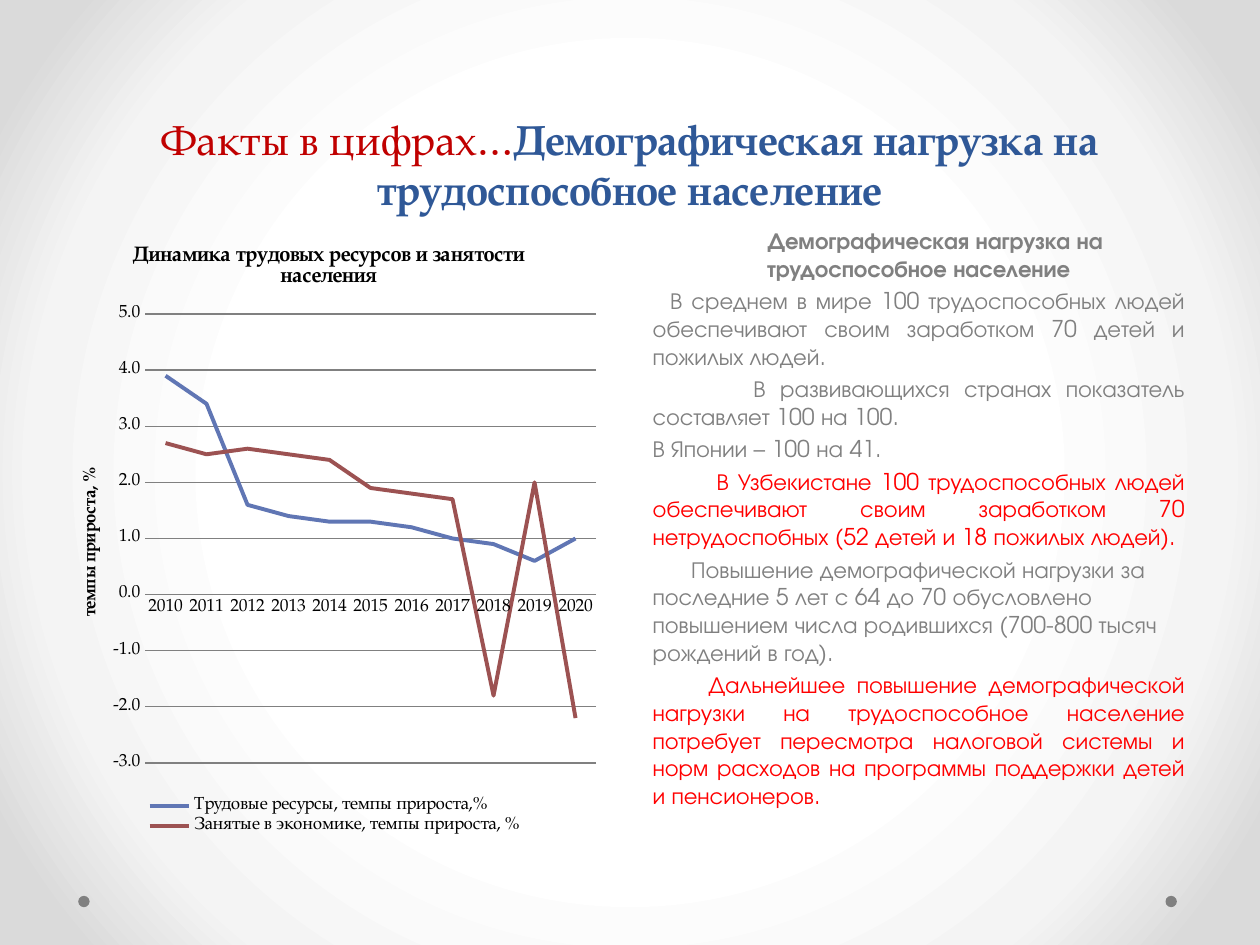
from dataclasses import dataclass

from lxml import etree
from pptx import Presentation
from pptx.chart.data import CategoryChartData
from pptx.dml.color import RGBColor
from pptx.enum.chart import XL_CHART_TYPE, XL_LEGEND_POSITION, XL_TICK_MARK
from pptx.enum.shapes import MSO_SHAPE
from pptx.enum.text import MSO_ANCHOR, MSO_AUTO_SIZE, PP_ALIGN
from pptx.oxml import parse_xml
from pptx.oxml.ns import nsdecls, qn
from pptx.util import Pt

CENTER, LEFT, JUSTIFY = PP_ALIGN.CENTER, PP_ALIGN.LEFT, PP_ALIGN.JUSTIFY
NO_TICK = XL_TICK_MARK.NONE

GRAY = RGBColor(0x80, 0x80, 0x80)
RED = RGBColor(0xFF, 0x00, 0x00)
DARK_RED = RGBColor(0xC0, 0x00, 0x00)
NAVY = RGBColor(0x2F, 0x58, 0x97)
BLACK = RGBColor(0x00, 0x00, 0x00)
BLUE_LINE = RGBColor(0x60, 0x76, 0xB4)
RED_LINE = RGBColor(0x9C, 0x52, 0x52)

SERIF, SANS = "TeX Gyre Pagella", "TeX Gyre Adventor"
COLUMN_TOP, COLUMN_WIDTH, COLUMN_HEIGHT = 126, 318.24, 356.4


@dataclass
class Paragraph:
    text: str
    indent: float = 0
    color: RGBColor = GRAY
    align: PP_ALIGN = JUSTIFY
    bold: bool = False


@dataclass
class Line:
    name: str
    values: tuple[float, ...]
    color: RGBColor


PARAGRAPHS = [
    Paragraph("Демографическая нагрузка на трудоспособное население", 19, align=CENTER, bold=True),
    Paragraph("В среднем в мире 100 трудоспособных людей обеспечивают своим заработком "
              "70 детей и пожилых людей.", 10),
    Paragraph("В развивающихся странах показатель составляет 100 на 100.", 57.5),
    Paragraph("В Японии – 100 на 41."),
    Paragraph("В Узбекистане 100 трудоспособных людей обеспечивают своим заработком "
              "70 нетрудоспобных (52 детей и 18 пожилых людей).", 36.5, RED),
    Paragraph("Повышение демографической нагрузки за последние 5 лет с 64 до 70 обусловлено "
              "повышением числа родившихся (700-800 тысяч рождений в год).", 22, align=LEFT),
    Paragraph("Дальнейшее повышение демографической нагрузки на трудоспособное население "
              "потребует пересмотра налоговой системы и норм расходов на программы поддержки "
              "детей и пенсионеров.", 32, RED),
]
LINES = [
    Line("Трудовые ресурсы, темпы прироста,%",
         (3.9, 3.4, 1.6, 1.4, 1.3, 1.3, 1.2, 1, 0.9, 0.6, 1), BLUE_LINE),
    Line("Занятые в экономике, темпы прироста, %",
         (2.7, 2.5, 2.6, 2.5, 2.4, 1.9, 1.8, 1.7, -1.8, 2, -2.2), RED_LINE),
]


def style(font, color: RGBColor, **values) -> None:
    for name, value in values.items():
        setattr(font, name, value)
    font.color.rgb = color


def place(shape, left: float, top: float, width: float, height: float) -> None:
    for name, value in dict(left=left, top=top, width=width, height=height).items():
        setattr(shape, name, Pt(value))


def set_frame(frame, anchor: MSO_ANCHOR) -> None:
    values = dict(word_wrap=True, auto_size=MSO_AUTO_SIZE.NONE, vertical_anchor=anchor)
    for name, value in values.items():
        setattr(frame, name, value)


def paint_background(page) -> None:
    """Radial gradient, white in the middle."""
    page.background.fill.solid()
    properties = page.element.find(".//" + qn("p:bgPr"))
    stops = "".join(f'<a:gs pos="{position * 1000}"><a:srgbClr val="{color}"/></a:gs>'
                    for position, color in ((50, "FFFFFF"), (76, "F4F4F4"), (92, "DADADA")))
    gradient = parse_xml(
        f'<a:gradFill {nsdecls("a")} rotWithShape="1"><a:gsLst>{stops}</a:gsLst>'
        '<a:path path="circle"><a:fillToRect l="50000" t="50000" r="50000" b="50000"/>'
        '</a:path></a:gradFill>')
    properties.replace(properties.find(qn("a:solidFill")), gradient)


def add_dot(page, left: float) -> None:
    dot = page.shapes.add_shape(MSO_SHAPE.OVAL, Pt(left), Pt(511.9), Pt(6.5), Pt(6.5))
    dot.shadow.inherit = False
    dot.fill.solid()
    dot.fill.fore_color.rgb = GRAY
    dot.line.fill.background()


def fill_title(box) -> None:
    place(box, 36, 0, 648, 126)
    set_frame(box.text_frame, MSO_ANCHOR.BOTTOM)
    para = box.text_frame.paragraphs[0]
    para.alignment = CENTER
    for text, color, bold in (("Факты в цифрах…", DARK_RED, False),
                              ("Демографическая нагрузка на трудоспособное население", NAVY, True)):
        span = para.add_run()
        span.text = text
        style(span.font, color, name=SERIF, size=Pt(24), bold=bold)


def fill_body(box) -> None:
    place(box, 365.76, COLUMN_TOP, COLUMN_WIDTH, COLUMN_HEIGHT)
    frame = box.text_frame
    set_frame(frame, MSO_ANCHOR.TOP)
    for number, item in enumerate(PARAGRAPHS):
        para = frame.add_paragraph() if number else frame.paragraphs[0]
        para.alignment = item.align
        properties = para._p.get_or_add_pPr()
        properties.set("marL", "0")
        properties.set("indent", str(Pt(item.indent)))
        etree.SubElement(properties, qn("a:buNone"))
        span = para.add_run()
        span.text = item.text
        style(span.font, item.color, name=SANS, size=Pt(13.2), bold=item.bold)


def set_layout(part, index: int, **fractions: float) -> None:
    """Place a chart part by fractions of the chart; index is its child position."""
    for old in part.findall(qn("c:layout")):
        part.remove(old)
    target = '<c:layoutTarget val="inner"/>' if part.tag == qn("c:plotArea") else ""
    modes = '<c:xMode val="edge"/><c:yMode val="edge"/>'
    sizes = "".join(f'<c:{name} val="{value}"/>' for name, value in fractions.items())
    part.insert(index, parse_xml(f'<c:layout {nsdecls("c")}><c:manualLayout>{target}{modes}{sizes}'
                                 '</c:manualLayout></c:layout>'))


def set_title(owner, frame, text: str, size: float) -> None:
    owner.has_title = True
    frame = frame()
    frame.text = text
    style(frame.paragraphs[0].runs[0].font, BLACK, name=SERIF, size=Pt(size), bold=True)


def add_growth_chart(page) -> None:
    data = CategoryChartData(number_format="0.0")
    data.categories = [str(year) for year in range(2010, 2021)]
    for line in LINES:
        data.add_series(line.name, line.values)
    chart = page.shapes.add_chart(XL_CHART_TYPE.LINE, Pt(28.8), Pt(COLUMN_TOP), Pt(COLUMN_WIDTH),
                                  Pt(COLUMN_HEIGHT), data).chart
    style(chart.font, BLACK, name=SERIF, size=Pt(10))
    set_title(chart, lambda: chart.chart_title.text_frame,
              "Динамика трудовых ресурсов и занятости населения", 12)
    chart.plots[0].vary_by_categories = False
    for series, line in zip(chart.plots[0].series, LINES):
        series.smooth = False
        series.format.line.width = Pt(2.25)
        series.format.line.color.rgb = line.color

    # Axes
    years, growth = chart.category_axis, chart.value_axis
    for axis in (years, growth):
        axis.major_tick_mark = axis.minor_tick_mark = NO_TICK
    years.format.line.color.rgb = GRAY
    growth.format.line.fill.background()
    growth.major_gridlines.format.line.color.rgb = GRAY
    growth.minimum_scale, growth.maximum_scale, growth.major_unit = -3, 5, 1
    growth.tick_labels.number_format = "0.0"
    growth.tick_labels.number_format_is_linked = False
    set_title(growth, lambda: growth.axis_title.text_frame, "темпы прироста, %", 10)
    axis_title = chart.element.find(".//" + qn("c:valAx") + "/" + qn("c:title"))
    turned = axis_title.find(".//" + qn("a:bodyPr"))
    turned.set("rot", "-5400000")
    turned.set("vert", "horz")

    # Legend and placement
    chart.has_legend = True
    chart.legend.position = XL_LEGEND_POSITION.BOTTOM
    chart.legend.include_in_layout = False
    set_layout(axis_title, 1, x=0.05, y=0.39)
    set_layout(chart.element.find(".//" + qn("c:plotArea")), 0, x=0.17, y=0.15, w=0.81, h=0.72)
    set_layout(chart.element.find(".//" + qn("c:legend")), 1, x=0.16, y=0.92, w=0.7, h=0.07)


def main() -> None:
    deck = Presentation()
    deck.slide_width, deck.slide_height = Pt(720), Pt(540)
    page = deck.slides.add_slide(deck.slide_layouts[1])
    paint_background(page)
    for left in (666, 44.7):
        add_dot(page, left)
    fill_title(page.shapes.title)
    fill_body(page.placeholders[1])
    add_growth_chart(page)
    deck.save("out.pptx")


if __name__ == "__main__":
    main()
